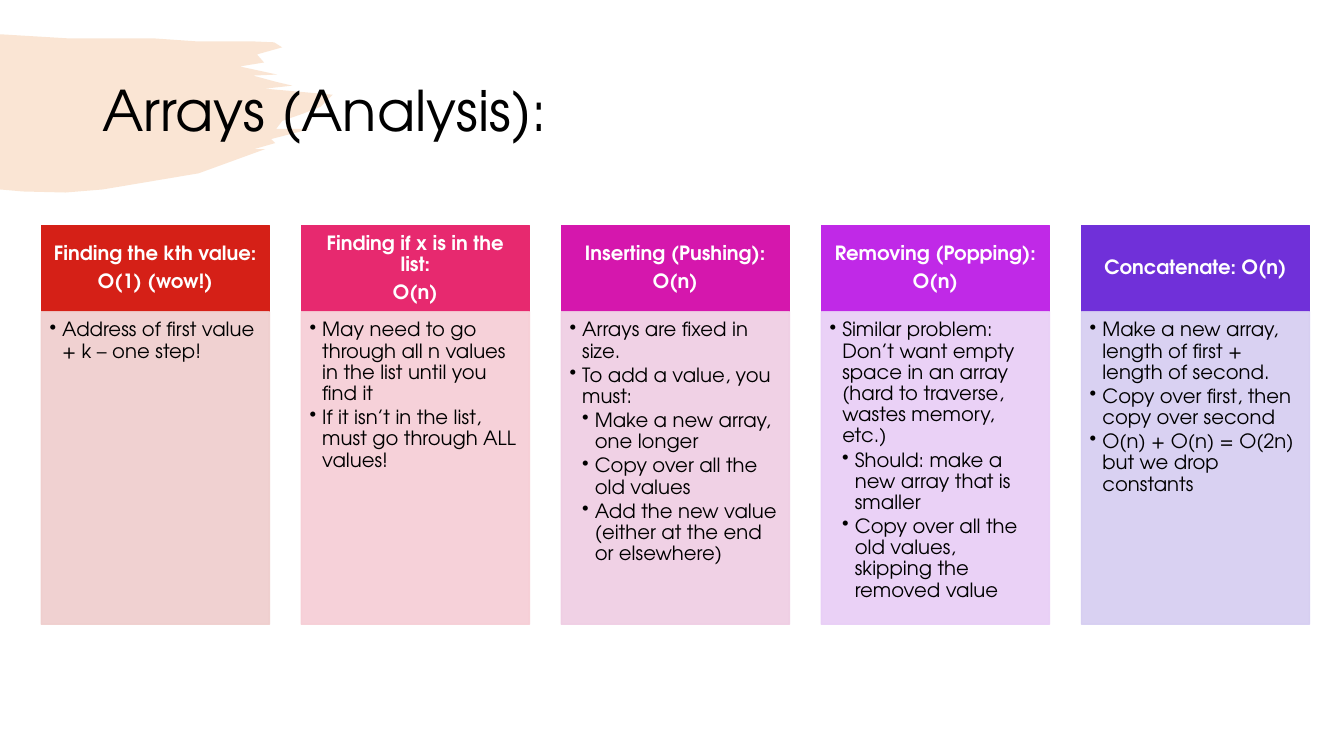
from dataclasses import dataclass
from lxml.etree import SubElement
from pptx import Presentation
from pptx.dml.color import RGBColor
from pptx.enum.shapes import MSO_SHAPE
from pptx.enum.text import MSO_ANCHOR, PP_ALIGN
from pptx.oxml.ns import qn
from pptx.util import Pt

FONT = "TeX Gyre Adventor"
BLACK = RGBColor.from_string("000000")
WHITE = RGBColor.from_string("FFFFFF")
ORANGE = RGBColor.from_string("E78129")
RED = RGBColor.from_string("D52017")
RED_TINT = RGBColor.from_string("EFCDCC")
ROSE = RGBColor.from_string("E7296F")
ROSE_TINT = RGBColor.from_string("F6CDD5")
MAGENTA = RGBColor.from_string("D517AD")
MAGENTA_TINT = RGBColor.from_string("EFCCE3")
VIOLET = RGBColor.from_string("C029E7")
VIOLET_TINT = RGBColor.from_string("E8CDF6")
INDIGO = RGBColor.from_string("7030D9")
INDIGO_TINT = RGBColor.from_string("D5CDF1")

CARD_LEFT, CARD_PITCH, CARD_WIDTH = 29.5, 185.75, 162.9
HEAD_TOP, HEAD_HEIGHT, BODY_HEIGHT = 161, 61.75, 223.2
HEAD_INSETS = (7.84, 4.48, 7.84, 4.48)
BODY_INSETS = (5.88, 5.88, 7.84, 8.82)
INDENT = 9

BRUSH_UNIT = 0.72
BRUSH_OUTLINE = [
    (0, 34), (66, 38), (151, 38), (194, 41), (248, 41), (272, 42), (280, 47),
    (255, 54), (262, 62), (238, 66), (275, 74), (251, 75), (273, 81), (290, 85),
    (263, 88), (330, 94), (318, 106), (300, 113), (280, 120), (274, 128),
    (308, 128), (269, 138), (273, 142), (252, 148), (263, 148), (197, 172),
    (102, 188), (65, 191), (23, 190), (0, 188),
]


@dataclass
class Bullet:
    text: str
    level: int = 0


@dataclass
class Card:
    heading: list[str]
    bullets: list[Bullet]
    color: RGBColor
    tint: RGBColor


CARDS = [
    Card(["Finding the kth value:", "O(1) (wow!)"],
         [Bullet("Address of first value + k – one step!")],
         RED, RED_TINT),
    Card(["Finding if x is in the list:", "O(n)"],
         [Bullet("May need to go through all n values in the list until you find it"),
          Bullet("If it isn’t in the list, must go through ALL values!")],
         ROSE, ROSE_TINT),
    Card(["Inserting (Pushing):", "O(n)"],
         [Bullet("Arrays are fixed in size."),
          Bullet("To add a value, you must:"),
          Bullet("Make a new array, one longer", 1),
          Bullet("Copy over all the old values", 1),
          Bullet("Add the new value (either at the end or elsewhere)", 1)],
         MAGENTA, MAGENTA_TINT),
    Card(["Removing (Popping):", "O(n)"],
         [Bullet("Similar problem: Don’t want empty space in an array "
                 "(hard to traverse, wastes memory, etc.)"),
          Bullet("Should: make a new array that is smaller", 1),
          Bullet("Copy over all the old values, skipping the removed value", 1)],
         VIOLET, VIOLET_TINT),
    Card(["Concatenate: O(n)"],
         [Bullet("Make a new array, length of first + length of second."),
          Bullet("Copy over first, then copy over second"),
          Bullet("O(n) + O(n) = O(2n) but we drop constants")],
         INDIGO, INDIGO_TINT),
]


def write(tf, text: str, *, level=None, size=14, color=BLACK, bold=False,
          align=PP_ALIGN.LEFT, after=0) -> None:
    p = tf.add_paragraph() if tf.text else tf.paragraphs[0]
    p.alignment, p.line_spacing, p.space_after = align, 0.9, Pt(after)
    if level is not None:
        p.level = level
        pPr = p._p.get_or_add_pPr()
        pPr.set("marL", str(Pt(INDENT * (level + 1))))
        pPr.set("indent", str(-Pt(INDENT)))
        SubElement(pPr, qn("a:buChar")).set("char", "•")
    r = p.add_run()
    r.text = text
    r.font.name, r.font.size, r.font.bold = FONT, Pt(size), bold
    r.font.color.rgb = color


def set_opacity(sp, percent: int) -> None:
    for clr in sp.element.spPr.iter(qn("a:srgbClr")):
        SubElement(clr, qn("a:alpha")).set("val", str(percent * 1000))


def paint(sp, color: RGBColor) -> None:
    sp.shadow.inherit = False
    sp.fill.solid()
    sp.fill.fore_color.rgb = color


def add_panel(slide, left: float, top: float, height: float, color: RGBColor,
              insets: tuple, anchor: MSO_ANCHOR):
    sp = slide.shapes.add_shape(MSO_SHAPE.RECTANGLE, Pt(left), Pt(top),
                                Pt(CARD_WIDTH), Pt(height))
    paint(sp, color)
    sp.line.color.rgb = color
    sp.line.width = Pt(1)
    tf = sp.text_frame
    tf.word_wrap, tf.vertical_anchor = True, anchor
    tf.margin_left, tf.margin_top, tf.margin_right, tf.margin_bottom = map(Pt, insets)
    return sp


def add_card(slide, card: Card, left: float) -> None:
    head = add_panel(slide, left, HEAD_TOP, HEAD_HEIGHT, card.color,
                     HEAD_INSETS, MSO_ANCHOR.MIDDLE)
    for line in card.heading:
        write(head.text_frame, line, color=WHITE, bold=True,
              align=PP_ALIGN.CENTER, after=4.9)
    body = add_panel(slide, left, HEAD_TOP + HEAD_HEIGHT, BODY_HEIGHT, card.tint,
                     BODY_INSETS, MSO_ANCHOR.TOP)
    set_opacity(body, 90)
    for bullet in card.bullets:
        write(body.text_frame, bullet.text, level=bullet.level, after=2.1)


def add_brush(slide) -> None:
    start, *rest = BRUSH_OUTLINE
    builder = slide.shapes.build_freeform(*start, scale=Pt(BRUSH_UNIT))
    builder.add_line_segments(rest, close=True)
    sp = builder.convert_to_shape()
    paint(sp, ORANGE)
    sp.line.fill.background()
    set_opacity(sp, 20)


def main() -> None:
    prs = Presentation()
    prs.slide_width, prs.slide_height = Pt(960), Pt(540)
    slide = prs.slides.add_slide(prs.slide_layouts[6])
    add_brush(slide)
    tf = slide.shapes.add_textbox(Pt(66), Pt(28.75), Pt(828), Pt(104.4)).text_frame
    tf.word_wrap, tf.vertical_anchor = True, MSO_ANCHOR.MIDDLE
    write(tf, "Arrays (Analysis):", size=40)
    for i, card in enumerate(CARDS):
        add_card(slide, card, CARD_LEFT + i * CARD_PITCH)
    prs.save("out.pptx")


if __name__ == "__main__":
    main()
